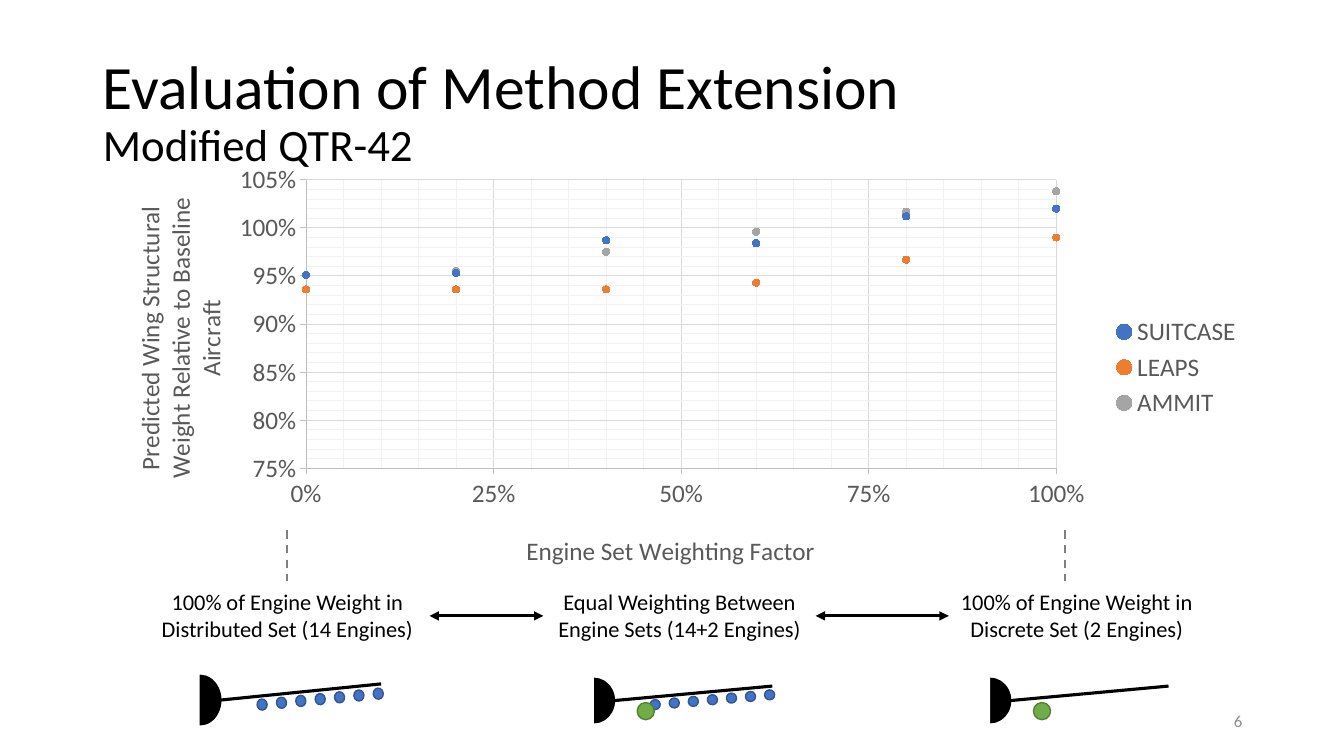
from lxml import etree
from pptx import Presentation
from pptx import util as u
from pptx.chart.data import XyChartData
from pptx.dml.color import RGBColor
from pptx.enum import chart as ch, dml, shapes, text
from pptx.oxml import parse_xml
from pptx.oxml.ns import nsdecls, qn

PX = 9144  # 100 px to the inch
FONT = "Calibri"
COLORS = {
    "black": "000000", "white": "FFFFFF", "gray": "595959", "number": "8C8C8C",
    "dash": "808080", "axis": "BFBFBF", "grid": "D9D9D9", "minor": "F2F2F2",
    "blue": "4472C4", "blue_line": "325491", "orange": "ED7D31",
    "silver": "A5A5A5", "green": "70AD47", "green_line": "538035",
}
FACTORS = [0, 0.2, 0.4, 0.6, 0.8, 1]
SERIES = [
    ("SUITCASE", "blue", [0.951, 0.953, 0.987, 0.984, 1.012, 1.02]),
    ("LEAPS", "orange", [0.936, 0.936, 0.936, 0.943, 0.967, 0.99]),
    ("AMMIT", "silver", [0.936, 0.955, 0.975, 0.996, 1.017, 1.038]),
]
# label, label box, wing box, has distributed engines, has discrete engine
CASES = [
    ("100% of Engine Weight in Distributed Set (14 Engines)",
     (144, 579, 282, 64), (178, 670, 200, 49), True, False),
    ("Equal Weighting Between Engine Sets (14+2 Engines)",
     (539, 579, 270, 64), (569, 673, 197, 44), True, True),
    ("100% of Engine Weight in Discrete Set (2 Engines)",
     (941, 579, 254, 64), (962, 673, 197, 44), False, True),
]


def px(*values):
    return [u.Emu(round(v * PX)) for v in values]


def rgb(name):
    return RGBColor.from_string(COLORS[name])


def style(font, size, color):
    font.name, font.size, font.bold = FONT, u.Pt(size), False
    font.color.rgb = rgb(color)


def add_line(s, start, end, color, width, arrows=False, dash=False):
    cn = s.shapes.add_connector(shapes.MSO_CONNECTOR.STRAIGHT, *px(*start, *end))
    cn.line.color.rgb, cn.line.width = rgb(color), u.Pt(width)
    if dash:
        cn.line.dash_style = dml.MSO_LINE.DASH
    if arrows:
        for tag in ("a:headEnd", "a:tailEnd"):
            etree.SubElement(cn.line._get_or_add_ln(), qn(tag), type="triangle")
    etree.SubElement(cn._element.spPr, qn("a:effectLst"))


def add_solid(s, kind, box, fill, line=None, rotation=0):
    sp = s.shapes.add_shape(kind, *px(*box))
    sp.shadow.inherit = False
    sp.rotation = rotation
    sp.fill.solid()
    sp.fill.fore_color.rgb = rgb(fill)
    if line:
        sp.line.color.rgb, sp.line.width = rgb(line), u.Pt(1)
    else:
        sp.line.fill.background()


def add_title(s, box):
    sp = s.shapes.title
    sp.left, sp.top, sp.width, sp.height = px(*box)
    tf = sp.text_frame
    tf.text = "Evaluation of Method Extension\vModified QTR-42"
    tf.word_wrap, tf.auto_size = True, text.MSO_AUTO_SIZE.NONE
    tf.vertical_anchor = text.MSO_ANCHOR.MIDDLE
    p = tf.paragraphs[0]
    p.alignment, p.line_spacing = text.PP_ALIGN.LEFT, 0.9
    for r, size in zip(p.runs, (44, 32)):
        style(r.font, size, "black")


def add_text(s, box, words, size, color, align):
    tf = s.shapes.add_textbox(*px(*box)).text_frame
    tf.word_wrap = True
    p = tf.paragraphs[0]
    p.text, p.alignment = words, align
    style(p.runs[0].font, size, color)
    return tf


def add_wing(s, box, distributed, discrete):
    x, y, w, h = box
    sx, sy = w / 200, h / 49
    oval, rect = shapes.MSO_SHAPE.OVAL, shapes.MSO_SHAPE.RECTANGLE
    # Fuselage and wing
    root, mid = x + 41 * sx, y + h / 2
    add_solid(s, oval, (x, y, 41 * sx, h), "black", "black")
    add_line(s, (root, mid), (x + w, mid - 16 * sy), "black", 2.25)
    # Engines along the wing
    for i in range(7 if distributed else 0):
        engine = (x + (77 + 19.2 * i) * sx, mid - (1 + 1.8 * i) * sy, 10, 11 * sy)
        add_solid(s, oval, engine, "blue", "blue_line", 354.9)
    # Cover for the left half of the fuselage
    add_solid(s, rect, (x - 4, y - 2, 24, h + 9), "white")
    if discrete:
        add_solid(s, oval, (x + 63, y + 24, 17, 17), "green", "green_line")


def set_layout(parent, x, y, w=None, h=None):
    """Place a chart part by fractions of the chart area."""
    for old in parent.findall(qn("c:layout")):
        parent.remove(old)
    target = '<c:layoutTarget val="inner"/>' if w else ""
    size = f'<c:w val="{w}"/><c:h val="{h}"/>' if w else ""
    layout = parse_xml(
        f'<c:layout {nsdecls("c")}><c:manualLayout>{target}<c:xMode val="edge"/>'
        f'<c:yMode val="edge"/><c:x val="{x}"/><c:y val="{y}"/>{size}'
        '</c:manualLayout></c:layout>')
    words = parent.find(qn("c:tx"))
    if words is None:
        parent.insert(0, layout)
    else:
        words.addnext(layout)


def format_axis(axis, title, low, high, major, minor, place):
    axis.minimum_scale, axis.maximum_scale = low, high
    axis.major_unit, axis.minor_unit = major, minor
    axis.has_major_gridlines = axis.has_minor_gridlines = True
    for part, color in ((axis, "axis"), (axis.major_gridlines, "grid")):
        part.format.line.color.rgb = rgb(color)
        part.format.line.width = u.Pt(0.75)
    axis._element.find(qn("c:minorGridlines")).append(parse_xml(
        f'<c:spPr {nsdecls("c", "a")}><a:ln w="9525"><a:solidFill>'
        f'<a:srgbClr val="{COLORS["minor"]}"/></a:solidFill></a:ln></c:spPr>'))
    axis.major_tick_mark = ch.XL_TICK_MARK.OUTSIDE
    axis.minor_tick_mark = ch.XL_TICK_MARK.NONE
    axis.tick_labels.number_format = "0%"
    axis.tick_labels.number_format_is_linked = False
    style(axis.tick_labels.font, 18, "gray")
    tf = axis.axis_title.text_frame
    tf.text = title
    style(tf.paragraphs[0].runs[0].font, 18, "gray")
    set_layout(axis.axis_title._element, *place)


def add_weight_chart(s, box):
    data = XyChartData(number_format="0%")
    for name, _, values in SERIES:
        series = data.add_series(name)
        for point in zip(FACTORS, values):
            series.add_data_point(*point)
    chart = s.shapes.add_chart(ch.XL_CHART_TYPE.XY_SCATTER, *px(*box), data).chart
    style(chart.font, 18, "gray")
    chart.has_title = False
    # Axes and plot area
    format_axis(chart.category_axis, "Engine Set Weighting Factor",
                0, 1, 0.25, 0.05, (0.37, 0.88))
    format_axis(chart.value_axis,
                "Predicted Wing Structural Weight Relative to Baseline Aircraft",
                0.75, 1.05, 0.05, 0.01, (0.03, 0.09))
    body = chart.value_axis.axis_title.text_frame._txBody.bodyPr
    body.set("rot", "-5400000")
    body.set("vert", "horz")
    set_layout(chart._chartSpace.chart.plotArea, 0.184, 0.058, 0.647, 0.68)
    # Legend
    chart.has_legend = True
    chart.legend.position = ch.XL_LEGEND_POSITION.RIGHT
    chart.legend.include_in_layout = False
    style(chart.legend.font, 18, "gray")
    # Markers
    chart.plots[0].vary_by_categories = False
    for series, (_, color, _) in zip(chart.plots[0].series, SERIES):
        series.smooth = False
        series.format.line.fill.background()
        marker = series.marker
        marker.style, marker.size = ch.XL_MARKER_STYLE.CIRCLE, 5
        marker.format.fill.solid()
        marker.format.fill.fore_color.rgb = rgb(color)
        marker.format.line.color.rgb = rgb(color)


def add_cases(s, cases):
    for words, label, wing, distributed, discrete in cases:
        add_wing(s, wing, distributed, discrete)
        add_text(s, label, words, 16, "black", text.PP_ALIGN.CENTER)
    # Arrows between neighbouring labels
    for (_, a, *_), (_, b, *_) in zip(cases, cases[1:]):
        add_line(s, (a[0] + a[2], 611), (b[0], 611), "black", 2.25, arrows=True)
    # Dashed links to both ends of the axis
    for x in (285, 1056):
        add_line(s, (x, 526), (x, 576), "dash", 1.5, dash=True)


def add_page_number(s, box):
    tf = add_text(s, box, "6", 12, "number", text.PP_ALIGN.RIGHT)
    tf.vertical_anchor = text.MSO_ANCHOR.MIDDLE


def main():
    prs = Presentation()
    prs.slide_width, prs.slide_height = px(1333, 750)
    s = prs.slides.add_slide(prs.slide_layouts[5])
    add_title(s, (92, 40, 1029, 145))
    add_weight_chart(s, (92, 154, 1150, 421))
    add_cases(s, CASES)
    add_page_number(s, (942, 695, 300, 40))
    prs.save("out.pptx")


if __name__ == "__main__":
    main()
